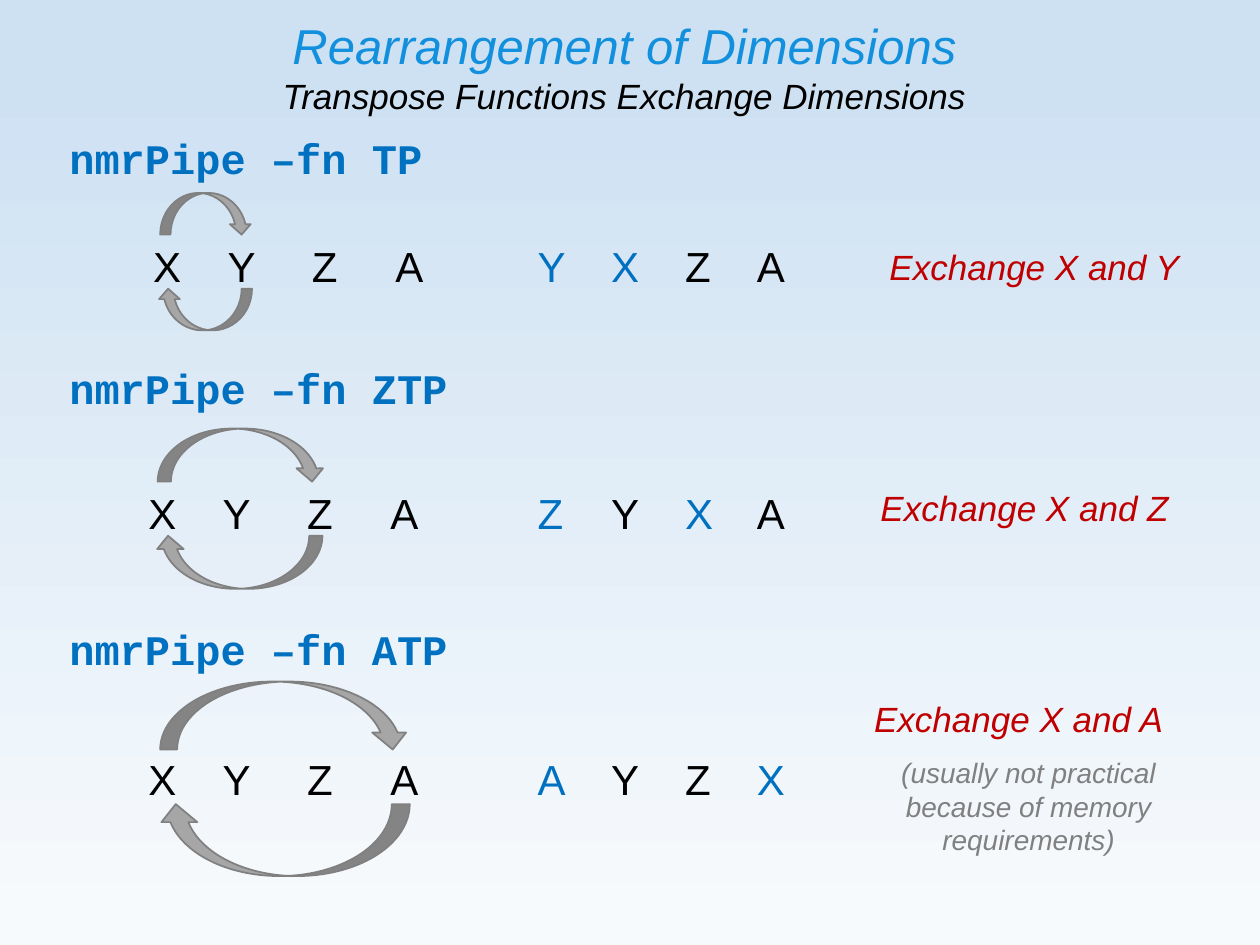
from dataclasses import dataclass

from lxml import etree
from pptx import Presentation
from pptx.dml.color import RGBColor
from pptx.enum.shapes import MSO_SHAPE
from pptx.enum.text import MSO_ANCHOR, MSO_AUTO_SIZE, PP_ALIGN
from pptx.oxml.ns import qn
from pptx.util import Cm, Pt

CURVED_ARROW = MSO_SHAPE.CURVED_DOWN_ARROW
TOP, MIDDLE = MSO_ANCHOR.TOP, MSO_ANCHOR.MIDDLE
FIXED_SIZE = MSO_AUTO_SIZE.NONE
LEFT, CENTER = PP_ALIGN.LEFT, PP_ALIGN.CENTER

BLACK, BLUE = "000000", "0070C0"
AXES = "XYZA"
BEFORE_TABS = (1.5, 3.2, 4.88)
AFTER_TABS = (1.48, 2.97, 4.42)

TITLE = dict(name="Arial", size=Pt(28), italic=True, color="1290DE")
SUBTITLE = dict(name="Arial", size=Pt(20), italic=True, color=BLACK)
COMMAND = dict(name="Courier New", size=Pt(24), bold=True, color=BLUE)
LETTER = dict(name="Arial", size=Pt(24), color=BLACK)
CAPTION = dict(name="Arial", size=Pt(20), italic=True, color="C00000")
REMARK = dict(name="Arial", size=Pt(16), italic=True, color="808080")


@dataclass
class Area:
    """A rectangle in centimetres."""
    left: float
    top: float
    width: float
    height: float

    def lengths(self) -> tuple:
        return Cm(self.left), Cm(self.top), Cm(self.width), Cm(self.height)


@dataclass
class Transpose:
    """One exchange of the X axis with another axis."""
    function: str
    partner: str
    command_top: float
    letters_left: float
    letters_top: float
    caption: Area
    down_arrow: Area
    up_arrow: Area
    remark: str = ""


TRANSPOSES = [
    Transpose("TP", "Y", 2.54, 2.84, 4.24, Area(17.68, 4.83, 6.5, 1.12),
              Area(3.23, 3.89, 1.85, 0.84), Area(3.18, 5.82, 1.9, 0.84)),
    Transpose("ZTP", "Z", 7.19, 2.74, 9.22, Area(17.5, 9.68, 6.65, 1.12),
              Area(3.18, 8.64, 3.38, 1.07), Area(3.12, 10.8, 3.38, 1.07)),
    Transpose("ATP", "A", 12.45, 2.74, 14.58, Area(17.37, 13.94, 6.73, 3.51),
              Area(3.23, 13.74, 5.03, 1.37), Area(3.18, 16.21, 5.08, 1.45),
              "(usually not practical because of memory requirements)"),
]


def rgb(value: str) -> RGBColor:
    return RGBColor.from_string(value)


def add_span(para, text: str, style: dict) -> None:
    span = para.add_run()
    span.text = text
    for key, value in style.items():
        if key == "color":
            span.font.color.rgb = rgb(value)
        else:
            setattr(span.font, key, value)


def add_box(slide, area: Area, anchor=TOP):
    frame = slide.shapes.add_textbox(*area.lengths()).text_frame
    frame.word_wrap = True
    frame.vertical_anchor = anchor
    return frame


def add_letters(slide, area: Area, letters: str, tabs: tuple) -> None:
    """Write the axes at tab stops, with the moved ones in blue."""
    para = add_box(slide, area, MIDDLE).paragraphs[0]
    stops = etree.SubElement(para._p.get_or_add_pPr(), qn("a:tabLst"))
    for position in tabs:
        etree.SubElement(stops, qn("a:tab"), pos=str(Cm(position)), algn="l")
    for index, letter in enumerate(letters):
        color = BLACK if letter == AXES[index] else BLUE
        text = f"\t{letter}" if index else letter
        add_span(para, text, LETTER | {"color": color})


def add_arrow(slide, area: Area, rotation: int) -> None:
    arrow = slide.shapes.add_shape(CURVED_ARROW, *area.lengths())
    arrow.rotation = rotation
    arrow.shadow.inherit = False
    arrow.fill.solid()
    arrow.fill.fore_color.rgb = rgb("A6A6A6")
    arrow.line.color.rgb = rgb("808080")
    arrow.line.width = Pt(1)


def add_transpose(slide, item: Transpose) -> None:
    # Command
    command = add_box(slide, Area(0.64, item.command_top, 10.16, 1.27))
    add_span(command.paragraphs[0], f" nmrPipe –fn {item.function}", COMMAND)

    # Axis order before and after
    exchanged = AXES.translate(str.maketrans(f"X{item.partner}", f"{item.partner}X"))
    add_letters(slide, Area(item.letters_left, item.letters_top, 7.32, 2.24),
                AXES, BEFORE_TABS)
    add_letters(slide, Area(10.59, item.letters_top, 7.09, 2.24),
                exchanged, AFTER_TABS)

    # Caption
    caption = add_box(slide, item.caption)
    add_span(caption.paragraphs[0], f"Exchange X and {item.partner}", CAPTION)
    if item.remark:
        para = caption.add_paragraph()
        para.alignment = CENTER
        para.space_before = Pt(9)
        add_span(para, item.remark, REMARK)

    # Exchange arrows
    add_arrow(slide, item.down_arrow, 0)
    add_arrow(slide, item.up_arrow, 180)


def set_background(slide) -> None:
    fill = slide.background.fill
    fill.gradient()
    fill.gradient_angle = 270
    for stop, (position, color) in zip(fill.gradient_stops,
                                       ((0.08, "CEE1F2"), (0.98, "F7FAFD"))):
        stop.position = position
        stop.color.rgb = rgb(color)


def set_title(slide) -> None:
    title = slide.shapes.title
    title.left, title.top, title.width, title.height = Area(0.1, 0.18, 24.97, 2.31).lengths()
    frame = title.text_frame
    frame.auto_size = FIXED_SIZE
    frame.vertical_anchor = MIDDLE
    add_span(frame.paragraphs[0], "Rearrangement of Dimensions", TITLE)
    add_span(frame.add_paragraph(), "Transpose Functions Exchange Dimensions", SUBTITLE)
    for para in frame.paragraphs:
        para.alignment = CENTER


def main() -> None:
    deck = Presentation()
    deck.slide_width, deck.slide_height = Cm(25.4), Cm(19.05)
    slide = deck.slides.add_slide(deck.slide_layouts[5])
    set_background(slide)
    set_title(slide)
    for item in TRANSPOSES:
        add_transpose(slide, item)
    deck.save("out.pptx")


if __name__ == "__main__":
    main()
